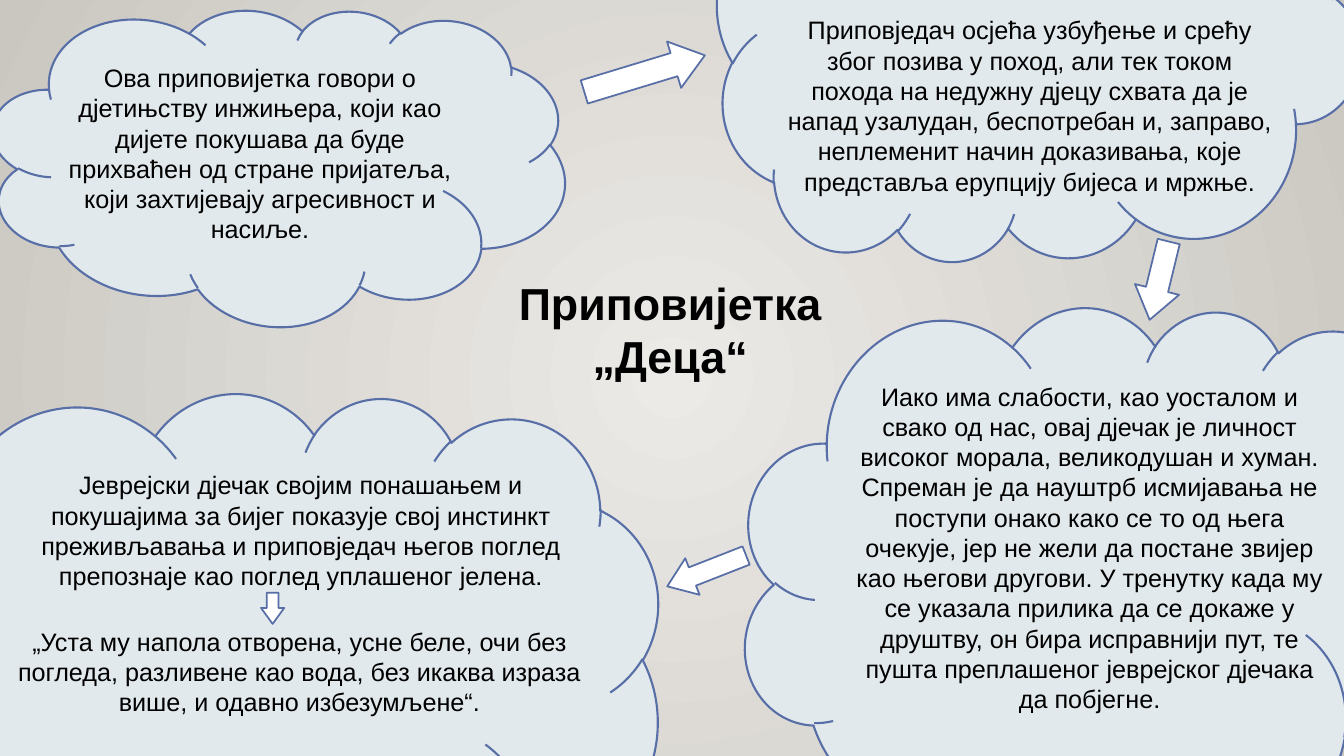
from lxml.etree import SubElement
from pptx import Presentation
from pptx.dml.color import RGBColor
from pptx.enum.shapes import MSO_SHAPE
from pptx.enum.text import MSO_ANCHOR, MSO_AUTO_SIZE, PP_ALIGN
from pptx.oxml.ns import qn
from pptx.util import Pt

BODY = {"name": "Arial", "size": Pt(18), "bold": False}
HEAD = {"name": "Arial", "size": Pt(32), "bold": True}
FRAME = {"word_wrap": True, "vertical_anchor": MSO_ANCHOR.TOP,
         "auto_size": MSO_AUTO_SIZE.SHAPE_TO_FIT_TEXT}

CLOUDS = [
    ((-101.5, 272, 572.5, 441.5), 8.8, [
        ((118, 60, 396.7, 94.3),
         "Jеврејски дјечак својим понашањем и покушајима за бијег показује свој "
         "инстинкт преживљавања и приповједач његов поглед препознаје као поглед "
         "уплашеног јелена."),
        ((85, 171.5, 460.8, 72.7),
         "„Уста му напола отворена, усне беле, очи без погледа, разливене као "
         "вода, без икаква израза више, и одавно избезумљене“.")]),
    ((512, -168, 461.5, 361.5), 185.1, [
        ((40.3, 175, 366.5, 138.2),
         "Приповједач осјећа узбуђење и срећу због позива у поход, али тек током "
         "похода на недужну дјецу схвата да је напад узалудан, беспотребан и, "
         "заправо, неплеменит начин доказивања, које представља ерупцију бијеса "
         "и мржње.")]),
    ((-6.5, 3, 410.5, 229.7), 5.5, [
        ((43.2, 38, 298, 138.2),
         "Ова приповијетка говори о дјетињству инжињера, који као дијете покушава "
         "да буде прихваћен од стране пријатеља, који захтијевају агресивност и "
         "насиље.")]),
    ((530.6, 211, 514, 412.5), 9.1, [
        ((68.4, 57.6, 358.6, 247),
         "Иако има слабости, као уосталом и свако од нас, овај дјечак је личност "
         "високог морала, великодушан и хуман. Спреман је да науштрб исмијавања "
         "не поступи онако како се то од њега очекује, јер не жели да постане "
         "звијер као његови другови. У тренутку када му се указала прилика да се "
         "докаже у друштву, он бира исправнији пут, те пушта преплашеног "
         "јеврејског дјечака да побјегне.")]),
]

ARROWS = [
    ((415.4, 35.3, 90, 34.6), 343.1, 0.664),
    ((799.2, 184.3, 57.6, 32.4), 103.7, 0.689),
    ((474.5, 393.8, 60.5, 28), 158.6, 0.689),
    ((183.6, 426.2, 22.3, 16.6), 90, 0.689),
]


def tint(code):
    return RGBColor.from_string(code)


def apply(target, values):
    for key, value in values.items():
        setattr(target, key, value)


def write(shape, text, font):
    frame = shape.text_frame
    apply(frame, FRAME)
    frame.text = text
    para = frame.paragraphs[0]
    para.alignment = PP_ALIGN.CENTER
    apply(para.font, font)
    para.font.color.rgb = tint("000000")


def draw(slide, kind, box, spin, fill, width):
    shape = slide.shapes.add_shape(kind, *map(Pt, box))
    shape.shadow.inherit = False
    shape.rotation = spin
    shape.fill.solid()
    shape.fill.fore_color.rgb = tint(fill)
    shape.line.color.rgb = tint("586EA6")
    shape.line.width = Pt(width)
    return shape


def cloud(slide, box, spin, notes):
    draw(slide, MSO_SHAPE.CLOUD, box, spin, "E1E9EC", 1.5)
    left, top = box[:2]
    for (x, y, w, h), text in notes:
        note = slide.shapes.add_textbox(Pt(left + x), Pt(top + y), Pt(w), Pt(h))
        write(note, text, BODY)


def arrow(slide, box, spin, tip):
    shape = draw(slide, MSO_SHAPE.RIGHT_ARROW, box, spin, "FFFFFF", 1.25)
    shape.adjustments[0] = 0.5
    shape.adjustments[1] = tip


def title(slide, box):
    head = slide.shapes.title
    apply(head, dict(zip(("left", "top", "width", "height"), map(Pt, box))))
    write(head, "Приповијетка „Деца“", HEAD)


def backdrop(slide):
    fill = slide.background.fill
    fill.gradient()
    for stop, code in zip(fill.gradient_stops, ("ECEAE7", "CAC7C1")):
        stop.color.rgb = tint(code)
    grad = next(slide.element.iter(qn("a:gradFill")))
    grad.remove(grad.find(qn("a:lin")))
    glow = SubElement(grad, qn("a:path"), {"path": "circle"})
    SubElement(glow, qn("a:fillToRect"), dict.fromkeys("ltrb", "50000"))


def main():
    deck = Presentation()
    deck.slide_width, deck.slide_height = Pt(960), Pt(540)
    slide = deck.slides.add_slide(deck.slide_layouts[5])
    backdrop(slide)
    for item in CLOUDS:
        cloud(slide, *item)
    title(slide, (329.8, 193, 298, 85))
    for item in ARROWS:
        arrow(slide, *item)
    deck.save("out.pptx")


if __name__ == "__main__":
    main()
